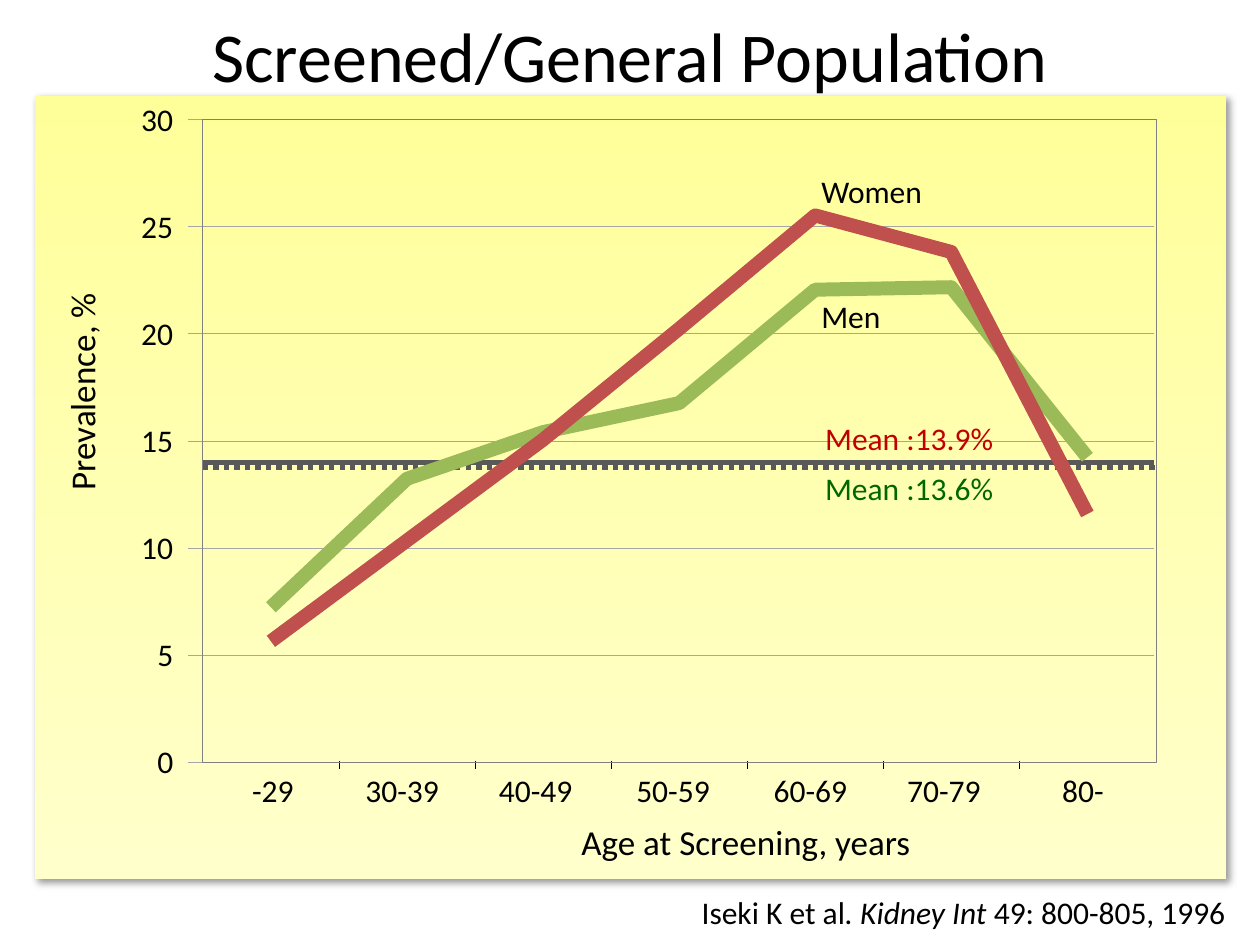
from lxml import etree
from pptx import Presentation
from pptx.dml.color import RGBColor
from pptx.enum.dml import MSO_LINE
from pptx.enum.shapes import MSO_CONNECTOR, MSO_SHAPE
from pptx.enum.text import MSO_AUTO_SIZE, PP_ALIGN
from pptx.oxml import parse_xml
from pptx.oxml.ns import nsdecls, qn
from pptx.util import Pt

PX = 9144
RECTANGLE = MSO_SHAPE.RECTANGLE
STRAIGHT = MSO_CONNECTOR.STRAIGHT
DOTTED = MSO_LINE.ROUND_DOT
CENTER = PP_ALIGN.CENTER
LEFT = PP_ALIGN.LEFT
GROW = MSO_AUTO_SIZE.SHAPE_TO_FIT_TEXT
color = RGBColor.from_string

presentation = Presentation()
presentation.slide_width = 1000 * PX
presentation.slide_height = 750 * PX
slide = presentation.slides.add_slide(presentation.slide_layouts[6])
shapes = slide.shapes


def add_text(box, parts, size=18, ink="000000", align=LEFT, wrap=False, inset=True):
    shape = shapes.add_textbox(*[length * PX for length in box])
    frame = shape.text_frame
    frame.word_wrap = wrap
    frame.auto_size = GROW
    if not inset:
        frame.margin_left = frame.margin_right = 0
        frame.margin_top = frame.margin_bottom = 0
    paragraph = frame.paragraphs[0]
    paragraph.alignment = align
    for part in parts:
        run = paragraph.add_run()
        run.text = part
        run.font.name = "Calibri"
        run.font.size = Pt(size)
        run.font.color.rgb = color(ink)
    return shape


def add_line(x1, y1, x2, y2, ink, width):
    line = shapes.add_connector(STRAIGHT, x1 * PX, y1 * PX, x2 * PX, y2 * PX)
    line.line.color.rgb = color(ink)
    line.line.width = Pt(width)
    etree.SubElement(line._element.spPr, qn("a:effectLst"))
    return line


panel = shapes.add_shape(RECTANGLE, 28 * PX, 76 * PX, 945 * PX, 622 * PX)
panel.line.fill.background()
panel.fill.gradient()
panel.fill.gradient_angle = 270
for stop, ink in zip(panel.fill.gradient_stops, ["FFFF99", "FFFFCC"]):
    stop.color.rgb = color(ink)
panel._element.spPr.append(parse_xml(
    f'<a:effectLst {nsdecls("a")}><a:outerShdw blurRad="{Pt(4)}" dist="{Pt(3)}" '
    'dir="2700000" algn="tl" rotWithShape="0"><a:srgbClr val="000000">'
    '<a:alpha val="40000"/></a:srgbClr></a:outerShdw></a:effectLst>'))

ages = ["-29", "30-39", "40-49", "50-59", "60-69", "70-79", "80-"]
age_lefts = [200, 290, 396, 505, 614, 720, 843]
for age, left in zip(ages, age_lefts):
    add_text((left, 612, 33 if len(age) == 3 else 59, 30), [age], inset=False)
add_text((435, 646, 314, 44), ["Age at Screening, years"], 20, align=CENTER, wrap=True)
citation = add_text((547, 704, 441, 40), ["Iseki K et al", ". Kidney Int ", "49: 800-805, 1996"])
citation.text_frame.paragraphs[0].runs[1].font.italic = True

for step in range(7):
    y = 605 - 85 * step
    add_line(149, y, 916, y, "A6A6A6", 0.5)
    label = str(5 * step)
    width = 13 * len(label)
    add_text((138 - width, y - 16, width, 30), [label], inset=False)
for step in range(1, 7):
    x = 161 + 108 * step
    add_line(x, 610, x, 604, "000000", 0.1)

men_mean = add_line(161, 371, 917, 371, "595959", 3)
men_mean.line.dash_style = DOTTED
add_line(160, 367, 916, 367, "595959", 3)
add_text((645, 328, 155, 40), ["Mean :13.9%"], ink="C00000")
add_text((645, 367, 157, 40), ["Mean :13.6%"], ink="006600")

series = [
    ("9BBB59", [482, 380, 343, 320, 230, 228, 363]),
    ("C0504D", [509, 429, 349, 261, 171, 200, 408]),
]
for ink, heights in series:
    points = [(215 + 108 * index, y) for index, y in enumerate(heights)]
    builder = shapes.build_freeform(*points[0], scale=PX)
    builder.add_line_segments(points[1:], close=False)
    curve = builder.convert_to_shape()
    curve.shadow.inherit = False
    curve.fill.background()
    curve.line.color.rgb = color(ink)
    curve.line.width = Pt(8)

add_text((642, 132, 102, 40), ["Women"])
add_text((642, 231, 68, 40), ["Men"])
prevalence = add_text((43, 231, 54, 168), ["Prevalence, %"], 20)
prevalence.rotation = 180
prevalence.text_frame._txBody.bodyPr.set("vert", "eaVert")

plot_frame = shapes.add_shape(RECTANGLE, 161 * PX, 95 * PX, 757 * PX, 510 * PX)
plot_frame.shadow.inherit = False
plot_frame.fill.background()
plot_frame.line.color.rgb = color("808080")
plot_frame.line.width = Pt(0.5)

add_text((0, 5, 1000, 77), ["Screened/General Population"], 40, align=CENTER, wrap=True)

presentation.save("out.pptx")
